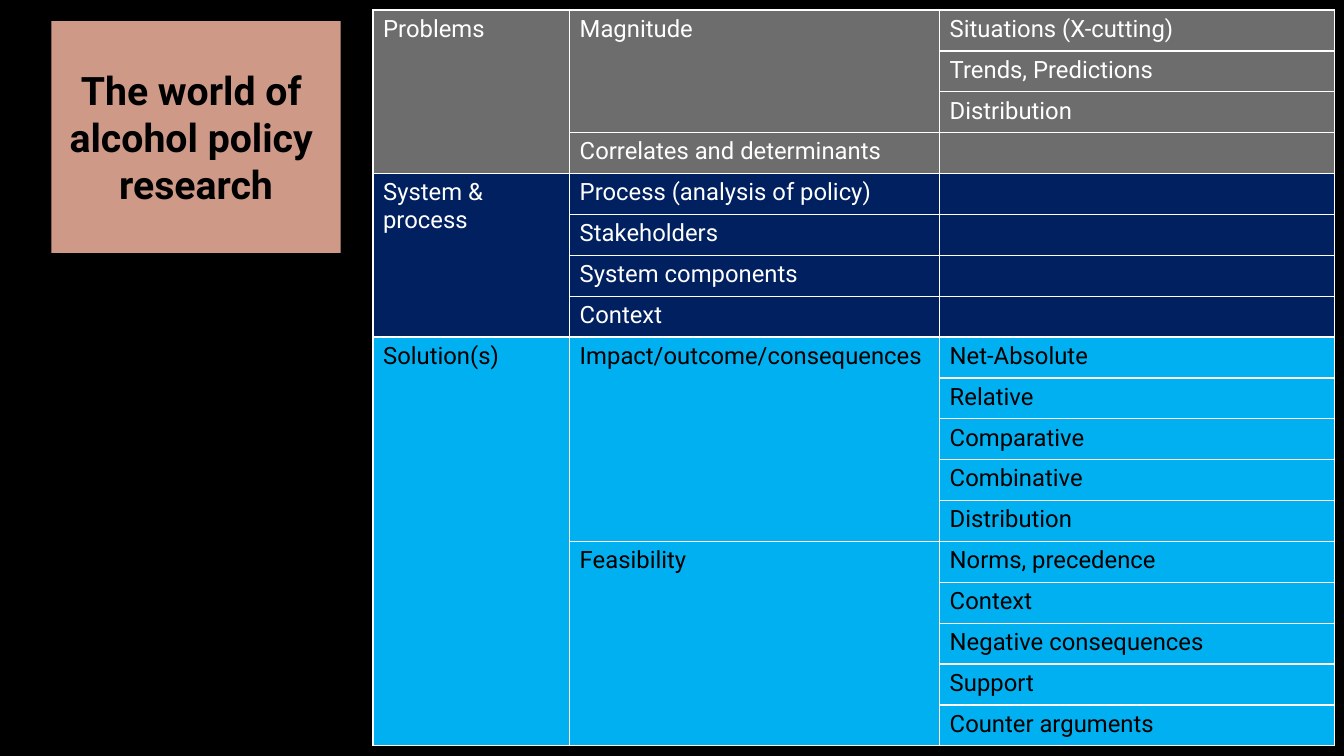
from lxml import etree
from pptx import Presentation, util as u
from pptx.dml.color import RGBColor
from pptx.enum import shapes, text
from pptx.oxml import ns

COLORS = {
    "background": "000000", "title": "CF9988", "dark": "000000", "light": "FFFFFF",
    "problems": "6D6D6D", "system": "002060", "solutions": "00B0F0",
}
FONT = "Roboto"
COLUMN_WIDTHS = (1.95, 3.67, 3.92)
SECTIONS = [
    ("Problems", "problems", "light", [
        ("Magnitude", ["Situations (X-cutting)", "Trends, Predictions", "Distribution"]),
        ("Correlates and determinants", [""]),
    ]),
    ("System & process", "system", "light", [
        ("Process (analysis of policy)", [""]),
        ("Stakeholders", [""]),
        ("System components", [""]),
        ("Context", [""]),
    ]),
    ("Solution(s)", "solutions", "dark", [
        ("Impact/outcome/consequences",
         ["Net-Absolute", "Relative", "Comparative", "Combinative", "Distribution"]),
        ("Feasibility",
         ["Norms, precedence", "Context", "Negative consequences", "Support",
          "Counter arguments"]),
    ]),
]


def rgb(name):
    return RGBColor.from_string(COLORS[name])


def write(frame, lines, size, color, bold=False, align=text.PP_ALIGN.LEFT):
    for index, line in enumerate(lines):
        para = frame.add_paragraph() if index else frame.paragraphs[0]
        para.alignment = align
        span = para.add_run()
        span.text = line
        span.font.name = FONT
        span.font.size = u.Pt(size)
        span.font.bold = bold
        span.font.color.rgb = rgb(color)


def add_title(page, left, top, width, height):
    box = page.shapes.add_shape(shapes.MSO_SHAPE.RECTANGLE, u.Inches(left), u.Inches(top),
                                u.Inches(width), u.Inches(height))
    box.shadow.inherit = False
    box.fill.solid()
    box.fill.fore_color.rgb = rgb("title")
    box.line.fill.background()
    frame = box.text_frame
    frame.word_wrap = True
    frame.vertical_anchor = text.MSO_ANCHOR.MIDDLE
    write(frame, ["The world of ", "alcohol policy ", "research"], size=28, color="dark",
          bold=True, align=text.PP_ALIGN.CENTER)


def style_cell(cell, fill):
    cell.margin_bottom = 0
    properties = cell._tc.get_or_add_tcPr()
    for side in ("lnL", "lnR", "lnT", "lnB"):
        line = etree.SubElement(properties, ns.qn(f"a:{side}"), w=str(u.Pt(1)))
        solid = etree.SubElement(line, ns.qn("a:solidFill"))
        etree.SubElement(solid, ns.qn("a:srgbClr"), val=COLORS["light"])
    cell.fill.solid()
    cell.fill.fore_color.rgb = rgb(fill)


def fill_cell(table, row, column, span_rows, label, color):
    cell = table.cell(row, column)
    if span_rows > 1:
        cell.merge(table.cell(row + span_rows - 1, column))
    if label:
        write(cell.text_frame, [label], size=17, color=color)


def add_research_table(page, left, top, width, height):
    row_count = sum(len(details) for section in SECTIONS for _, details in section[3])
    table = page.shapes.add_table(row_count, len(COLUMN_WIDTHS), u.Inches(left), u.Inches(top),
                                  u.Inches(width), u.Inches(height)).table
    table.first_row = False
    table.horz_banding = False
    for column, share in zip(table.columns, COLUMN_WIDTHS):
        column.width = u.Inches(width * share / sum(COLUMN_WIDTHS))
    for table_row in table.rows:
        table_row.height = u.Inches(height / row_count)

    row = 0
    for heading, fill, color, topics in SECTIONS:
        section_rows = sum(len(details) for _, details in topics)
        for section_row in range(row, row + section_rows):
            for column in range(len(COLUMN_WIDTHS)):
                style_cell(table.cell(section_row, column), fill)
        fill_cell(table, row, 0, section_rows, heading, color)
        for topic, details in topics:
            fill_cell(table, row, 1, len(details), topic, color)
            for detail in details:
                fill_cell(table, row, 2, 1, detail, color)
                row += 1


def main():
    deck = Presentation()
    deck.slide_width = u.Inches(13.33)
    deck.slide_height = u.Inches(7.5)
    page = deck.slides.add_slide(deck.slide_layouts[6])
    page.background.fill.solid()
    page.background.fill.fore_color.rgb = rgb("background")
    add_title(page, 0.51, 0.21, 2.87, 2.3)
    add_research_table(page, 3.7, 0.1, 9.54, 7.3)
    deck.save("out.pptx")


if __name__ == "__main__":
    main()
